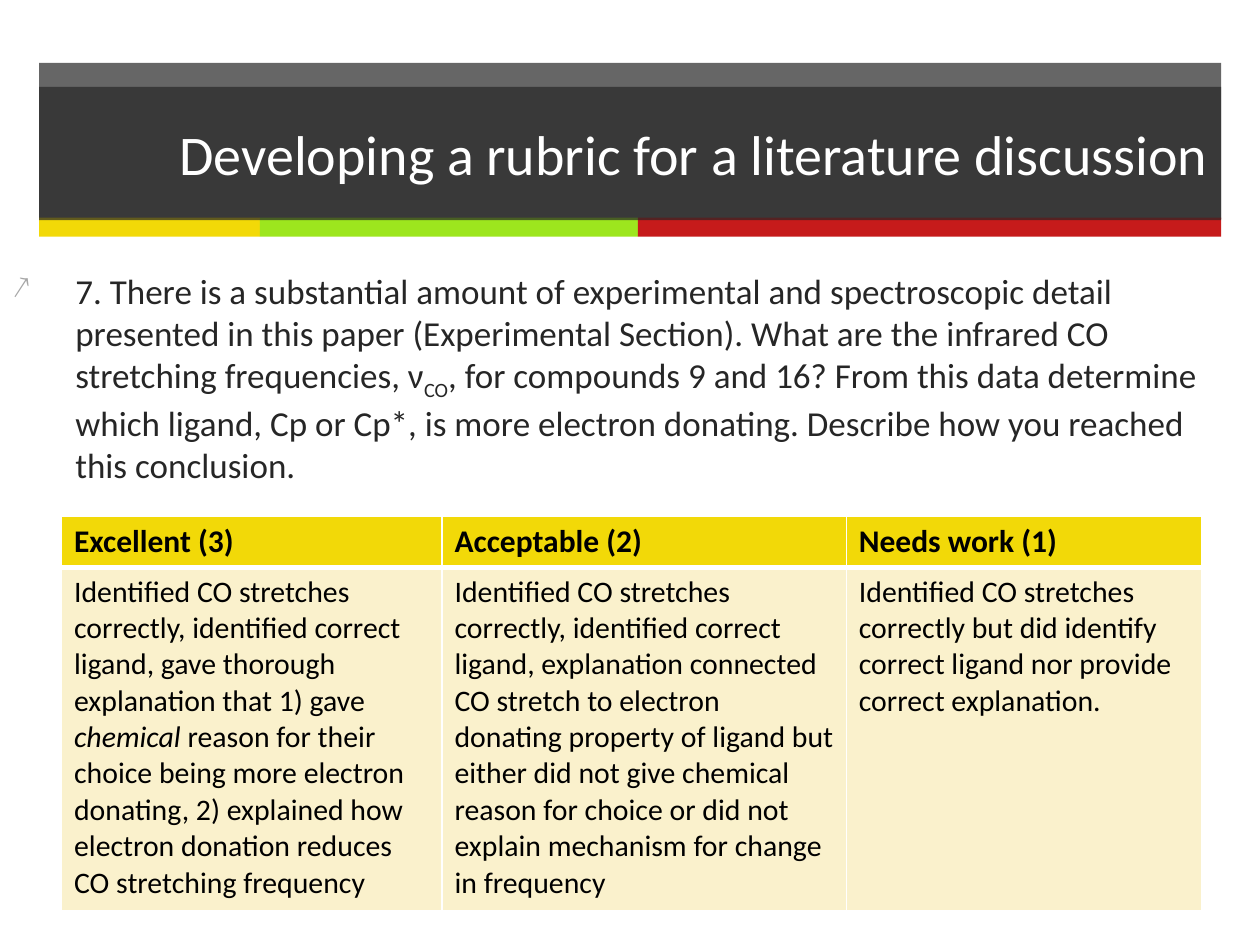
from dataclasses import dataclass

import pptx
import pptx.dml.color
import pptx.enum.shapes
import pptx.enum.text
import pptx.oxml.ns
import pptx.util
from lxml import etree
from pptx.util import Cm, Pt

FONT = "Calibri"
DARK, WHITE, BLACK = "262626", "FFFFFF", "000000"
YELLOW, GREEN, RED, CREAM = "F2D908", "9DE61E", "C61B1B", "FAF1CC"
BAND_LEFT, BAND_WIDTH = 0.79, 23.83


@dataclass
class Stripe:
    width: float
    color: str


@dataclass
class Level:
    """One column of the rubric; description parts alternate plain and italic."""
    width: float
    heading: str
    description: tuple[str, ...]


STRIPES = [Stripe(4.45, YELLOW), Stripe(7.62, GREEN), Stripe(11.76, RED)]

LEVELS = [
    Level(7.67, "Excellent (3)", (
        "Identified CO stretches correctly, identified correct ligand, gave thorough "
        "explanation that 1) gave ",
        "chemical",
        " reason for their choice being more electron donating, 2) explained how "
        "electron donation reduces CO stretching frequency")),
    Level(8.15, "Acceptable (2)", (
        "Identified CO stretches correctly, identified correct ligand, explanation "
        "connected CO stretch to electron donating property of ligand but either did "
        "not give chemical reason for choice or did not explain mechanism for change "
        "in frequency",)),
    Level(7.16, "Needs work (1)", (
        "Identified CO stretches correctly but did identify correct ligand nor provide "
        "correct explanation.",)),
]

QUESTION = (
    "7. There is a substantial amount of experimental and spectroscopic detail presented "
    "in this paper (Experimental Section). What are the infrared CO stretching "
    "frequencies, ν",
    "CO",
    ", for compounds 9 and 16? From this data determine which ligand, Cp or Cp*, is more "
    "electron donating. Describe how you reached this conclusion.",
)


def rgb(color: str) -> pptx.dml.color.RGBColor:
    return pptx.dml.color.RGBColor.from_string(color)


def add_element(parent, tag: str, **attributes: str):
    return etree.SubElement(parent, pptx.oxml.ns.qn(tag), attributes)


def set_font(paragraph, size: float, color: str, bold: bool = False) -> None:
    font = paragraph.font
    font.name, font.size, font.bold = FONT, Pt(size), bold
    font.color.rgb = rgb(color)


def add_rectangle(slide, left: float, top: float, width: float, height: float,
                  color: str, opacity: int = 100):
    shape = slide.shapes.add_shape(
        pptx.enum.shapes.MSO_SHAPE.RECTANGLE, Cm(left), Cm(top), Cm(width), Cm(height))
    shape.shadow.inherit = False
    shape.line.fill.background()
    shape.fill.solid()
    shape.fill.fore_color.rgb = rgb(color)
    if opacity < 100:
        fill_color = shape.fill._xPr.find(".//" + pptx.oxml.ns.qn("a:srgbClr"))
        add_element(fill_color, "a:alpha", val=str(opacity * 1000))
    return shape


def add_title_band(slide) -> None:
    add_rectangle(slide, BAND_LEFT, 1.27, BAND_WIDTH, 3.15, DARK, opacity=70)
    left = BAND_LEFT
    for stripe in STRIPES:
        add_rectangle(slide, left, 4.39, stripe.width, 0.38, stripe.color)
        left += stripe.width
    title = add_rectangle(slide, BAND_LEFT, 1.75, BAND_WIDTH, 2.69, DARK, opacity=70)
    title.text_frame.vertical_anchor = pptx.enum.text.MSO_ANCHOR.MIDDLE
    paragraph = title.text_frame.paragraphs[0]
    paragraph.text = "Developing a rubric for a literature discussion"
    paragraph.alignment = pptx.enum.text.PP_ALIGN.RIGHT
    set_font(paragraph, 32, WHITE)


def add_bullet(paragraph, character: str, color: str, percent: int) -> None:
    properties = paragraph._p.get_or_add_pPr()
    properties.set("marL", str(Cm(1.27)))
    properties.set("indent", str(-Cm(1.27)))
    add_element(add_element(properties, "a:buClr"), "a:srgbClr", val=color)
    add_element(properties, "a:buSzPct", val=str(percent * 1000))
    add_element(properties, "a:buChar", char=character)


def add_question(slide) -> None:
    text_box = slide.shapes.add_textbox(Cm(0), Cm(5.31), Cm(24.61), Cm(4.83))
    text_box.text_frame.word_wrap = True
    paragraph = text_box.text_frame.paragraphs[0]
    add_bullet(paragraph, "↗", "A6A6A6", 90)
    paragraph.space_before = Pt(20)
    set_font(paragraph, 20, DARK)
    before, subscript, after = QUESTION
    paragraph.add_run().text = before
    subscript_run = paragraph.add_run()
    subscript_run.text = subscript
    subscript_run.font._element.set("baseline", "-25000")
    paragraph.add_run().text = after


def style_cell(cell, color: str, bottom_width: float) -> None:
    """Give the cell white borders, then its fill, in schema order."""
    properties = cell._tc.get_or_add_tcPr()
    widths = {"a:lnL": 1, "a:lnR": 1, "a:lnT": 1, "a:lnB": bottom_width}
    for tag, width in widths.items():
        line = add_element(properties, tag, w=str(Pt(width)))
        add_element(add_element(line, "a:solidFill"), "a:srgbClr", val=WHITE)
    cell.fill.solid()
    cell.fill.fore_color.rgb = rgb(color)


def add_rubric(slide) -> None:
    heights = (1.03, 6.91)
    table = slide.shapes.add_table(
        2, len(LEVELS), Cm(1.24), Cm(10.41),
        Cm(sum(level.width for level in LEVELS)), Cm(sum(heights))).table
    table.horz_banding = False
    for row, height in zip(table.rows, heights):
        row.height = Cm(height)
    for index, level in enumerate(LEVELS):
        table.columns[index].width = Cm(level.width)
        heading, description = table.cell(0, index), table.cell(1, index)
        style_cell(heading, YELLOW, 3)
        style_cell(description, CREAM, 1)
        paragraph = heading.text_frame.paragraphs[0]
        paragraph.text = level.heading
        set_font(paragraph, 18, BLACK, bold=True)
        paragraph = description.text_frame.paragraphs[0]
        set_font(paragraph, 17, BLACK)
        for position, part in enumerate(level.description):
            run = paragraph.add_run()
            run.text = part
            if position % 2:
                run.font.italic = True


def main() -> None:
    presentation = pptx.Presentation()
    presentation.slide_width, presentation.slide_height = Cm(25.4), Cm(19.05)
    slide = presentation.slides.add_slide(presentation.slide_layouts[6])
    add_title_band(slide)
    add_question(slide)
    add_rubric(slide)
    presentation.save("out.pptx")


if __name__ == "__main__":
    main()
